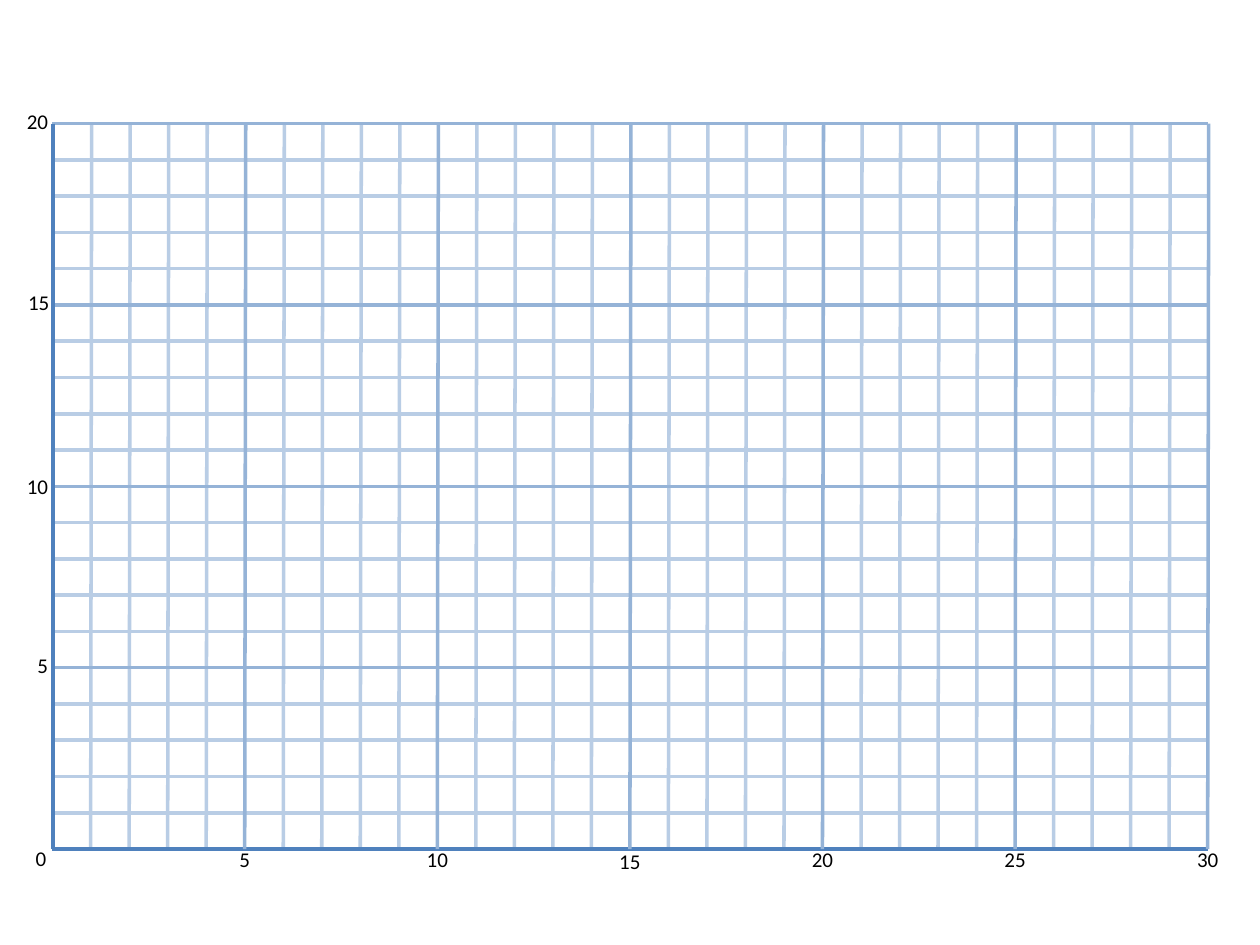
from dataclasses import dataclass

import pptx
import pptx.dml.color
import pptx.enum.shapes
import pptx.enum.text
import pptx.util
from lxml import etree
from pptx.oxml.ns import qn

Pt = pptx.util.Pt
RGB = pptx.dml.color.RGBColor.from_string
Align = pptx.enum.text.PP_ALIGN


@dataclass(frozen=True)
class Theme:
    minor: str = "B9CDE5"
    major: str = "95B3D7"
    axis: str = "4F81BD"
    text: str = "000000"
    font: str = "Calibri"
    size: float = 12
    line_width: float = 2


@dataclass(frozen=True)
class Grid:
    left: float = 29.8
    bottom: float = 485.2
    columns: int = 30
    rows: int = 20
    step_x: float = 22.01
    step_y: float = 20.73
    major_every: int = 5
    lean: float = 0.6  # upright lines end this far left of their start

    def x(self, column: int) -> float:
        return self.left + column * self.step_x

    def y(self, row: int) -> float:
        return self.bottom - row * self.step_y


@dataclass(frozen=True)
class Line:
    x1: float
    y1: float
    x2: float
    y2: float
    color: str


@dataclass(frozen=True)
class Label:
    value: int
    center_x: float
    center_y: float
    align: Align = Align.CENTER


THEME = Theme()
GRID = Grid()
LABEL_HEIGHT = 21.6
LABEL_WIDTHS = {1: 20.9, 2: 26.6}


def add_line(slide, line: Line) -> None:
    sp = slide.shapes.add_connector(
        pptx.enum.shapes.MSO_CONNECTOR.STRAIGHT,
        Pt(line.x1), Pt(line.y1), Pt(line.x2), Pt(line.y2))
    sp.line.color.rgb = RGB(line.color)
    sp.line.width = Pt(THEME.line_width)
    etree.SubElement(sp._element.spPr, qn("a:effectLst"))


def add_label(slide, label: Label) -> None:
    text = str(label.value)
    width = LABEL_WIDTHS[len(text)]
    sp = slide.shapes.add_textbox(
        Pt(label.center_x - width / 2), Pt(label.center_y - LABEL_HEIGHT / 2),
        Pt(width), Pt(LABEL_HEIGHT))
    tf = sp.text_frame
    tf.word_wrap = False
    tf.auto_size = pptx.enum.text.MSO_AUTO_SIZE.SHAPE_TO_FIT_TEXT
    p = tf.paragraphs[0]
    p.text = text
    p.alignment = label.align
    p.font.name = THEME.font
    p.font.size = Pt(THEME.size)
    p.font.color.rgb = RGB(THEME.text)


def column_line(column: int, color: str) -> Line:
    x = GRID.x(column) + GRID.lean
    return Line(x, GRID.y(GRID.rows), x - GRID.lean, GRID.bottom, color)


def row_line(row: int, color: str) -> Line:
    y = GRID.y(row)
    return Line(GRID.left, y, GRID.x(GRID.columns), y, color)


def grid_lines(major: bool, color: str) -> list[Line]:
    """Rows and columns of one weight, without the two axes."""
    def chosen(count: int) -> list[int]:
        return [i for i in range(1, count + 1)
                if (i % GRID.major_every == 0) == major]

    return ([row_line(i, color) for i in chosen(GRID.rows)]
            + [column_line(i, color) for i in chosen(GRID.columns)])


def axis_labels() -> list[Label]:
    step = GRID.major_every
    low = {15: 1.4}
    labels = [Label(0, 23.4, 490.4)]
    for value in range(step, GRID.columns + 1, step):
        labels.append(Label(value, GRID.x(value),
                            GRID.bottom + 5.8 + low.get(value, 0)))
    right_edges = {15: 35.3}
    lifts = {10: 0}
    for value in range(step, GRID.rows + 1, step):
        width = LABEL_WIDTHS[len(str(value))]
        labels.append(Label(value, right_edges.get(value, 34.6) - width / 2,
                            GRID.y(value) - lifts.get(value, 1.4), Align.RIGHT))
    return labels


def main() -> None:
    prs = pptx.Presentation()
    prs.slide_width, prs.slide_height = Pt(720), Pt(540)
    slide = prs.slides.add_slide(prs.slide_layouts[6])
    axis_x = GRID.left + GRID.lean
    lines = [
        *grid_lines(False, THEME.minor),
        row_line(0, THEME.axis),
        *grid_lines(True, THEME.major),
        Line(axis_x, GRID.y(GRID.rows), axis_x, GRID.bottom, THEME.axis),
    ]
    for line in lines:
        add_line(slide, line)
    for label in axis_labels():
        add_label(slide, label)
    prs.save("out.pptx")


if __name__ == "__main__":
    main()
